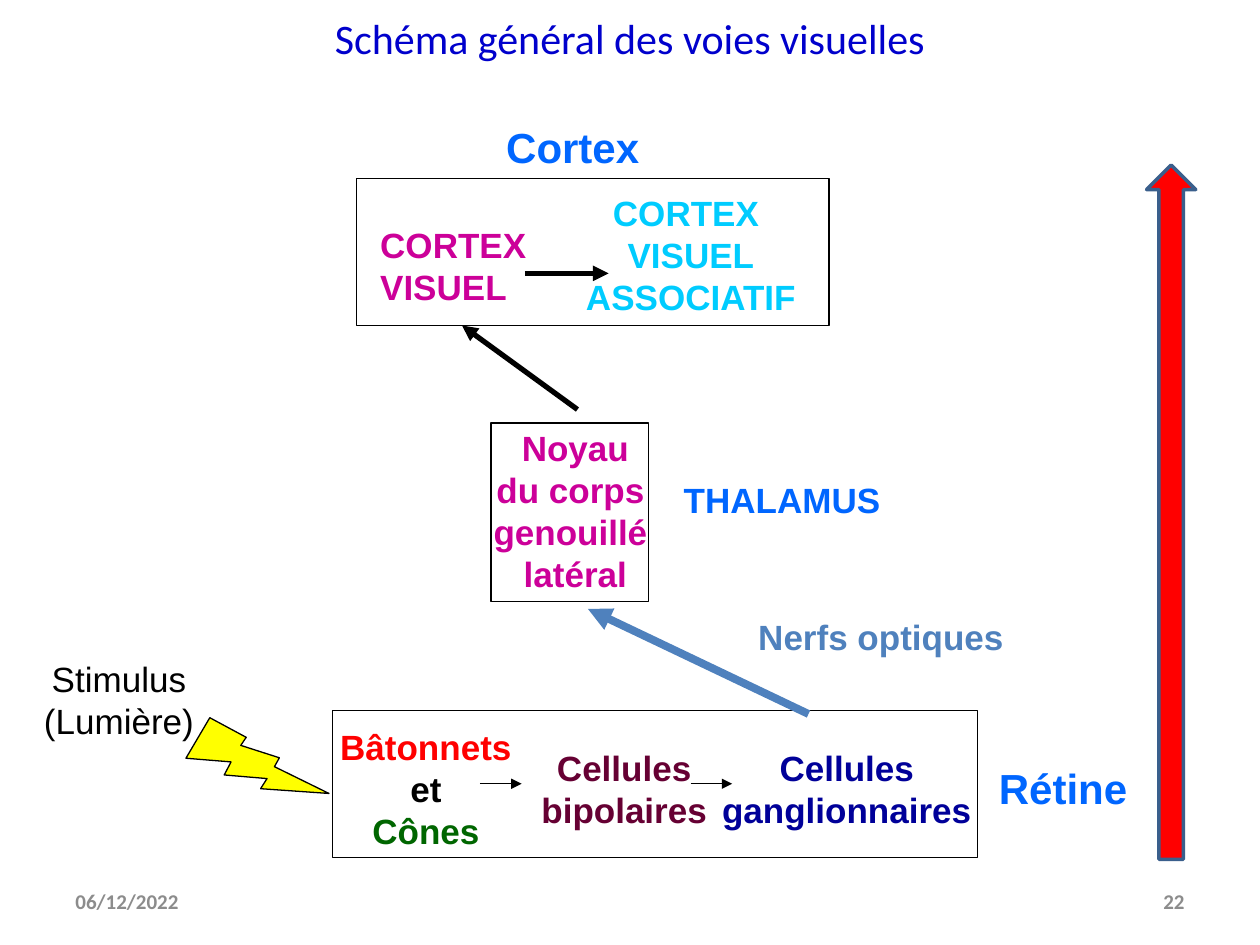
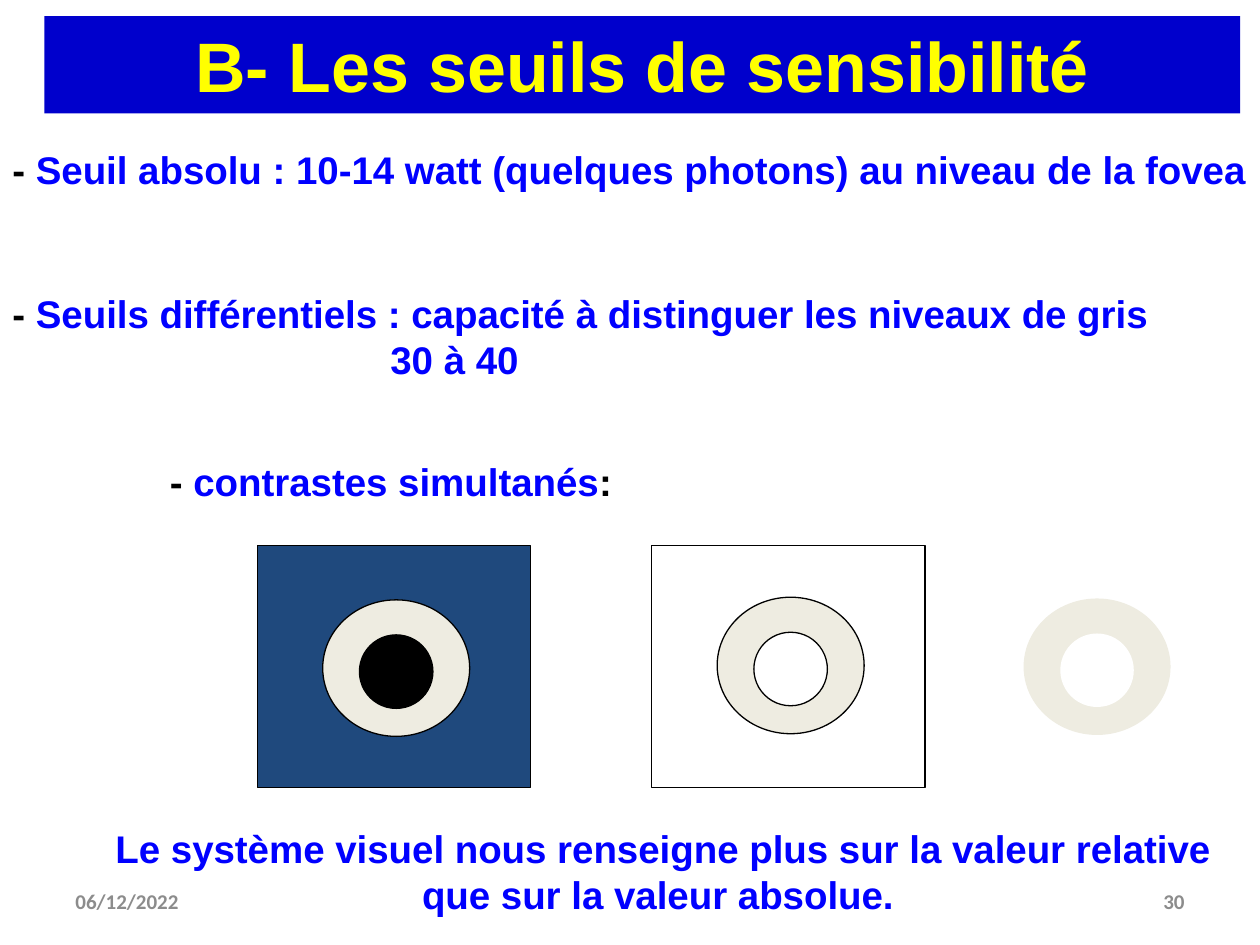
from lxml import etree
from pptx import Presentation
from pptx.dml.color import RGBColor
from pptx.enum.shapes import MSO_CONNECTOR, MSO_SHAPE
from pptx.enum.text import MSO_ANCHOR, MSO_AUTO_SIZE, PP_ALIGN
from pptx.oxml.ns import qn
from pptx.util import Pt

BLACK = RGBColor(0x00, 0x00, 0x00)
WHITE = RGBColor(0xFF, 0xFF, 0xFF)
GREY = RGBColor(0x8C, 0x8C, 0x8C)
RED = RGBColor(0xFF, 0x00, 0x00)
YELLOW = RGBColor(0xFF, 0xFF, 0x00)
GREEN = RGBColor(0x00, 0x66, 0x00)
PLUM = RGBColor(0x66, 0x00, 0x33)
MAGENTA = RGBColor(0xCC, 0x00, 0x99)
CYAN = RGBColor(0x00, 0xCC, 0xFF)
TITLE_BLUE = RGBColor(0x00, 0x00, 0xCC)
TEXT_BLUE = RGBColor(0x00, 0x00, 0xFF)
LABEL_BLUE = RGBColor(0x00, 0x66, 0xFF)
NAVY = RGBColor(0x00, 0x00, 0x99)
STEEL = RGBColor(0x4F, 0x81, 0xBD)
ARROW_EDGE = RGBColor(0x3A, 0x5F, 0x8C)
DARK_CARD = RGBColor(0x1F, 0x49, 0x7D)
CREAM = RGBColor(0xEE, 0xEC, 0xE1)

HEADING, BODY = "Calibri", "Arial"
LEFT, CENTER, RIGHT = PP_ALIGN.LEFT, PP_ALIGN.CENTER, PP_ALIGN.RIGHT
DATE = "06/12/2022"


def points(*values):
    """Convert numbers to lengths in points."""
    return [Pt(value) for value in values]


def add_run(paragraph, text, color, size, font=BODY, bold=True):
    """Append one formatted run to a paragraph."""
    run = paragraph.add_run()
    run.text = text
    run.font.name, run.font.size, run.font.bold = font, Pt(size), bold
    run.font.color.rgb = color


def add_text(shapes, box, lines, size=20, align=LEFT, wrap=False, font=BODY, bold=True):
    """Add a text box whose lines are lists of (text, colour) runs."""
    shape = shapes.add_textbox(*points(*box))
    frame = shape.text_frame
    frame.word_wrap = wrap
    frame.auto_size = MSO_AUTO_SIZE.SHAPE_TO_FIT_TEXT
    for index, runs in enumerate(lines):
        paragraph = frame.add_paragraph() if index else frame.paragraphs[0]
        paragraph.alignment = align
        for text, color in runs:
            add_run(paragraph, text, color, size, font, bold)
    return shape


def one_color(color, *lines):
    """Give every line the same colour."""
    return [[(line, color)] for line in lines]


def add_figure(shapes, kind, box, fill=None, line=BLACK, weight=0.75):
    """Add a preset shape without shadow, with optional fill and line."""
    shape = shapes.add_shape(kind, *points(*box))
    shape.shadow.inherit = False
    if fill is None:
        shape.fill.background()
    else:
        shape.fill.solid()
        shape.fill.fore_color.rgb = fill
    if line is None:
        shape.line.fill.background()
    else:
        shape.line.color.rgb = line
        shape.line.width = Pt(weight)
    return shape


def add_arrow(shapes, start, end, color=BLACK, weight=0.75):
    """Add a straight connector with a triangular head at its end."""
    arrow = shapes.add_connector(MSO_CONNECTOR.STRAIGHT, *points(*start, *end))
    arrow.line.color.rgb = color
    arrow.line.width = Pt(weight)
    etree.SubElement(arrow.line._get_or_add_ln(), qn("a:tailEnd"), type="triangle")
    etree.SubElement(arrow._element.spPr, qn("a:effectLst"))


def add_title_slide(presentation, title, box, color, size, font, bold, number):
    """Add a title-only slide with its title, date and number."""
    slide = presentation.slides.add_slide(presentation.slide_layouts[5])
    shape = slide.shapes.title
    shape.left, shape.top, shape.width, shape.height = points(*box)
    frame = shape.text_frame
    frame.auto_size = MSO_AUTO_SIZE.NONE
    frame.vertical_anchor = MSO_ANCHOR.MIDDLE
    frame.paragraphs[0].alignment = CENTER
    add_run(frame.paragraphs[0], title, color, size, font, bold)
    for left, text, align in ((36, DATE, LEFT), (516, number, RIGHT)):
        footer = add_text(slide.shapes, (left, 500.5, 168, 28.75), one_color(GREY, text),
                          12, align, True, HEADING)
        footer.text_frame.auto_size = MSO_AUTO_SIZE.NONE
        footer.text_frame.vertical_anchor = MSO_ANCHOR.MIDDLE
    return slide


def draw_cortex(slide, box):
    """Draw the cortex frame, its two areas and the link between them."""
    left, top, width, height = box
    shapes = slide.shapes.add_group_shape().shapes
    add_text(shapes, (left + 6.4, top + 22, 103.7, 55.4),
             one_color(MAGENTA, "CORTEX", "VISUEL"))
    add_text(shapes, (left + 123, top + 3.6, 136, 79),
             one_color(CYAN, "CORTEX ", "VISUEL", "ASSOCIATIF"), align=CENTER)
    add_text(shapes, (left + 78.4, top - 36, 90.7, 36), one_color(LABEL_BLUE, "Cortex"), 24)
    add_figure(shapes, MSO_SHAPE.RECTANGLE, box)
    add_arrow(shapes, (left + 96.2, top + 54), (left + 144, top + 54), weight=3)


def draw_thalamus(slide, box):
    """Draw the thalamic relay and its label."""
    left, top, width, height = box
    add_text(slide.shapes, (left - 5.8, top - 1.7, 108, 103),
             one_color(MAGENTA, "Noyau", "du corps ", "genouillé ", "latéral"), align=CENTER)
    add_text(slide.shapes, (left + width + 13, top + 28, 126.7, 31),
             one_color(LABEL_BLUE, "THALAMUS"))
    add_figure(slide.shapes, MSO_SHAPE.RECTANGLE, box)


def draw_retina(slide, box):
    """Draw the retina frame with its chain of cells."""
    left, top, width, height = box
    shapes = slide.shapes.add_group_shape().shapes
    receptors = [[("Bâtonnets", RED)], [("et", BLACK)], [("Cônes", GREEN)]]
    add_text(shapes, (left - 4.7, top + 5, 116, 79), receptors, align=CENTER)
    for offset, cell_width, kind, color in ((106.6, 120, "bipolaires", PLUM),
                                            (211.8, 164, "ganglionnaires", NAVY)):
        add_text(shapes, (left + offset, top + 16.8, cell_width, 55.4),
                 one_color(color, "Cellules", kind), align=CENTER)
    add_figure(shapes, MSO_SHAPE.RECTANGLE, box)
    for offset in (84.2, 204.5):
        add_arrow(shapes, (left + offset, top + 41.8), (left + offset + 23.8, top + 41.8))
    add_text(slide.shapes, (left + width + 5, top + 26, 87.8, 36),
             one_color(LABEL_BLUE, "Rétine"), 24)


def draw_stimulus(slide, box):
    """Draw the light stimulus and its bolt."""
    left, top, width, height = box
    add_text(slide.shapes, box, one_color(BLACK, "Stimulus", "(Lumière)"),
             align=CENTER, bold=False)
    bolt = add_figure(slide.shapes, MSO_SHAPE.LIGHTNING_BOLT,
                      (left + 95.8, top + 29.6, 60, 72), YELLOW)
    bolt.rotation = 329.3


def build_pathways(presentation):
    """Build the slide on the visual pathways."""
    slide = add_title_slide(presentation, "Schéma général des voies visuelles",
                            (54, -5.6, 612, 54.5), TITLE_BLUE, 24, HEADING, False, "22")
    draw_stimulus(slide, (18, 372.2, 100, 55.4))
    draw_thalamus(slide, (280.6, 241.7, 90, 102.2))
    draw_retina(slide, (190.1, 406.1, 368.6, 84))
    draw_cortex(slide, (203.8, 102.2, 270, 84))
    add_text(slide.shapes, (426.2, 348, 154.8, 31), one_color(STEEL, "Nerfs optiques"))
    add_arrow(slide.shapes, (462, 408), (336, 348), STEEL, 4.5)
    add_arrow(slide.shapes, (330, 234), (264, 186), weight=3)
    add_figure(slide.shapes, MSO_SHAPE.UP_ARROW, (655.2, 94.3, 28.1, 396.7),
               RED, ARROW_EDGE, 2)


def draw_eye(shapes, box, pupil, line=BLACK):
    """Draw a cream ring around a pupil."""
    left, top, width, height = box
    add_figure(shapes, MSO_SHAPE.OVAL, box, CREAM, line)
    add_figure(shapes, MSO_SHAPE.OVAL, (left + width / 4, top + 20, width / 2, width / 2),
               pupil, line)


def draw_contrasts(slide, box):
    """Draw the same ring on a dark card, on a white card and alone."""
    left, top, width, height = box
    shapes = slide.shapes.add_group_shape().shapes
    for offset, ring_top, card, pupil in ((0, 31, DARK_CARD, BLACK),
                                          (225.4, 29.5, WHITE, WHITE)):
        add_figure(shapes, MSO_SHAPE.RECTANGLE, (left + offset, top, 156.2, height), card)
        draw_eye(shapes, (left + offset + 37.4, top + ring_top, 84, 78), pupil)
    draw_eye(shapes, (left + width - 84, top + 30.2, 84, 78), WHITE, None)


def build_thresholds(presentation):
    """Build the slide on sensitivity thresholds."""
    slide = add_title_slide(presentation, "B- Les seuils de sensibilité",
                            (25.4, 9.2, 683.2, 55.6), YELLOW, 40, BODY, True, "30")
    band = slide.shapes.title
    band.fill.solid()
    band.fill.fore_color.rgb = TITLE_BLUE
    band.text_frame.margin_top, band.text_frame.margin_bottom = points(0, 0)
    dash = ("- ", BLACK)
    add_text(slide.shapes, (0, 80, 720, 60.5),
             [[dash, ("Seuil absolu : 10-14 watt (quelques photons) au niveau de la fovea",
                      TEXT_BLUE)]], 22, wrap=True)
    differential = add_text(
        slide.shapes, (0, 162, 762.5, 60.5),
        [[dash, ("Seuils différentiels : capacité à distinguer les niveaux de gris", TEXT_BLUE)],
         [("30 à 40", TEXT_BLUE)]], 22, wrap=True)
    levels = differential.text_frame.paragraphs[1]
    levels._p.get_or_add_pPr().set("marL", str(Pt(216)))
    add_text(slide.shapes, (90, 258, 270.7, 33.8),
             [[dash, ("contrastes simultanés", TEXT_BLUE), (":", BLACK)]], 22)
    draw_contrasts(slide, (147, 311.8, 521.9, 138.2))
    add_text(slide.shapes, (48.2, 468, 661.7, 60.5),
             one_color(TEXT_BLUE, "Le système visuel nous renseigne plus sur la valeur relative",
                       "que sur la valeur absolue. "), 22, CENTER)


def main():
    """Build and save the presentation."""
    presentation = Presentation()
    presentation.slide_width, presentation.slide_height = points(720, 540)
    build_pathways(presentation)
    build_thresholds(presentation)
    presentation.save("out.pptx")


if __name__ == "__main__":
    main()
